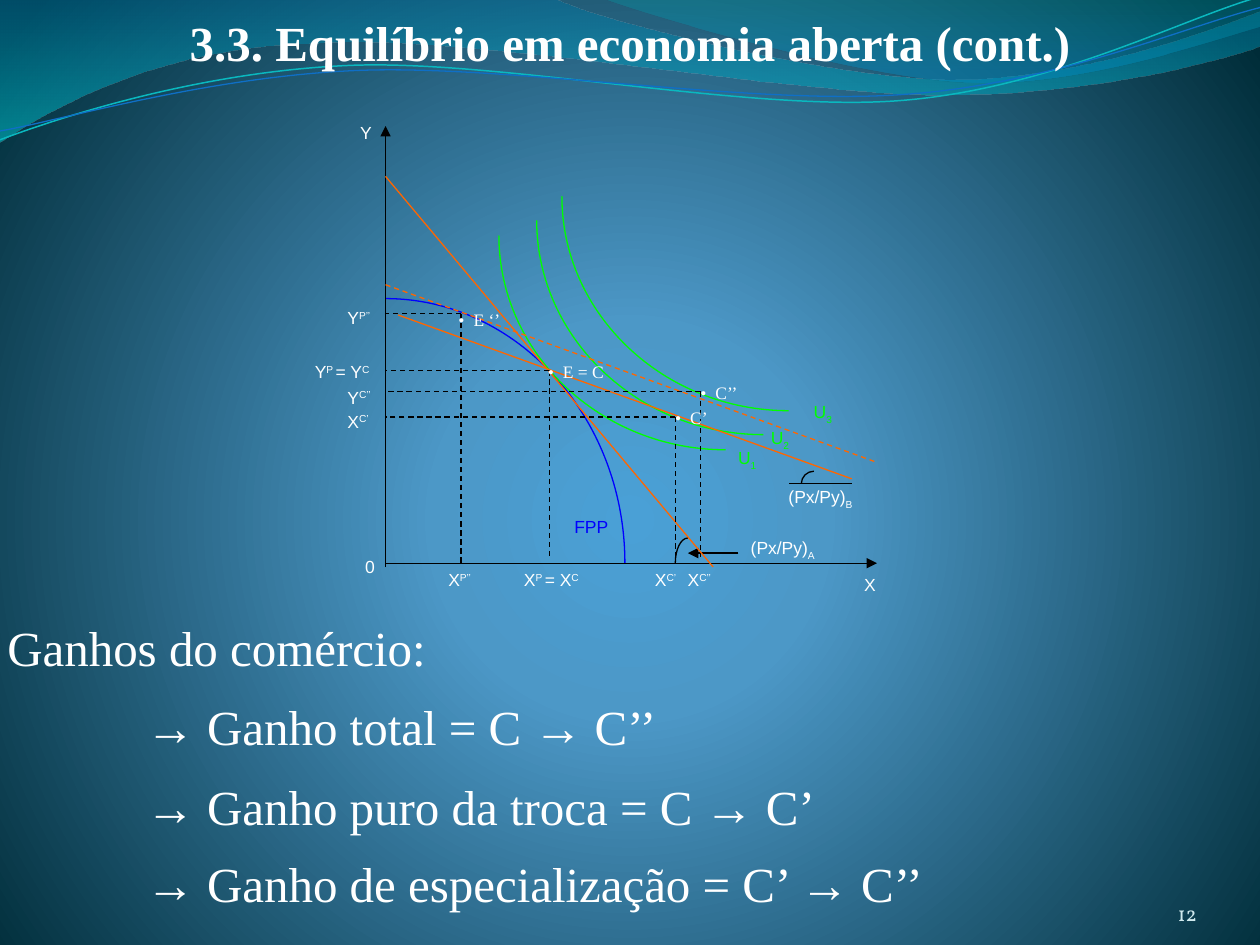
from lxml import etree
from pptx import Presentation
from pptx import util as u
from pptx.dml.color import RGBColor
from pptx.enum import dml, text
from pptx.oxml import parse_xml
from pptx.oxml.ns import nsdecls, qn

PX = 9144  # 100 px to the inch
C = {"white": "FFFFFF", "black": "000000", "green": "00FF00", "blue": "0000FF",
     "orange": "FF6600", "number": "D1EAEE", "teal": "0AB8BF", "azure": "0F6FC6"}
SANS, SERIF = "Arial", "Times New Roman"

prs = Presentation()
prs.slide_width, prs.slide_height = 1000 * PX, 750 * PX
s = prs.slides.add_slide(prs.slide_layouts[6])


def outline(pts, steps, close=False):
    """Add a freeform; steps has L for a line (one point) and C for a cubic curve (three)."""
    pts = [(x * PX, y * PX) for x, y in pts]
    fb = s.shapes.build_freeform(*pts[0])
    fb.add_line_segments(pts[1:], close=close)
    sp = fb.convert_to_shape()
    sp.shadow.inherit = False
    lines = iter(list(sp._element.iter(qn("a:lnTo"))))
    for step in steps:
        first = next(lines)
        if step == "C":
            first.tag = qn("a:cubicBezTo")
            for _ in range(2):
                extra = next(lines)
                first.append(extra[0])
                extra.getparent().remove(extra)
    return sp


def label(x, y, runs, w=100, h=50, size=10, font=SANS, color="white"):
    """Add a text box; each run is (text, baseline in percent)."""
    sp = s.shapes.add_textbox(x * PX, y * PX, w * PX, h * PX)
    tf = sp.text_frame
    tf.word_wrap = True
    for words, base in runs:
        r = tf.paragraphs[0].add_run()
        r.text = words
        r.font.size, r.font.name = u.Pt(size), font
        r.font.color.rgb = RGBColor.from_string(C[color])
        if base:
            r.font._element.set("baseline", str(base * 1000))
    return tf


# Background and waves
top_wave = [(0, 0), (440, -1), (476, 17), (664, 63), (758, 63), (853, 63), (958, 26), (1000, 9),
            (1001, 36), (983, 44), (870, 76), (746, 75), (622, 75), (382, 28), (257, 34),
            (129, 36), (46, 83), (-1, 113)]
right_wave = [(479, -1), (509, 11), (682, 62), (769, 65), (856, 69), (961, 32), (1000, 21),
              (1000, 0)]
down = '<a:lin ang="5400000" scaled="1"/>'
glow = '<a:path path="circle"><a:fillToRect l="10000" t="110000" r="10000" b="100000"/></a:path>'
s.background.fill.gradient()
gradients = [(s._element, [(0, "4AA0D6", 100), (25, "4C98C7", 100), (100, "002C38", 100)], glow)]
for pts, steps, stops in (
        (top_wave, "LCCLCCC", [(0, "0074A1", 45), (100, "00C6CF", 55)]),
        (right_wave, "CCL", [(0, "00A1A9", 30), (80, "008BBF", 45)])):
    sp = outline(pts, steps, close=True)
    sp.line.fill.background()
    sp.fill.gradient()
    gradients.append((sp._element.spPr, stops, down))
for host, stops, direction in gradients:
    gs = "".join(f'<a:gs pos="{pos * 1000}"><a:srgbClr val="{rgb}"><a:alpha val="{a * 1000}"/>'
                 f'</a:srgbClr></a:gs>' for pos, rgb, a in stops)
    old = next(host.iter(qn("a:gradFill")))
    old.getparent().replace(old, parse_xml(
        f'<a:gradFill {nsdecls("a")} rotWithShape="1"><a:gsLst>{gs}</a:gsLst>{direction}</a:gradFill>'))

# Curves: wave outlines, then quarter ellipses with control points at 0.55 of each radius
curves = [
    ([(0, 111), (48, 93), (158, 57), (277, 52), (395, 47), (593, 89), (713, 80),
      (833, 71), (938, 15), (998, -2)], "teal", 0.85),
    ([(0, 104), (47, 96), (164, 61), (283, 56), (403, 51), (597, 84), (717, 75),
      (836, 67), (941, 21), (1000, 6)], "azure", 0.75)]
for x0, y0, x1, y1, color in (
        (606, 345, 426, 175, "green"), (306, 237, 496, 447, "blue"),
        (576, 357, 396, 187, "green"), (626, 326, 446, 156, "green"),
        (546, 427, 536, 447, "black"), (646, 374, 636, 384, "black")):
    curves.append(([(x0, y0), (x0 + 0.55 * (x1 - x0), y0), (x1, y1 - 0.55 * (y1 - y0)),
                    (x1, y1)], color, 0.75))
for pts, color, width in curves:
    sp = outline(pts, "C" * (len(pts) // 3))
    sp.fill.background()
    sp.line.color.rgb = RGBColor.from_string(C[color])
    sp.line.width = u.Pt(width)

# Straight lines: axes, price lines, dashed guides
for x0, y0, x1, y1, color, style in (
        (306, 450, 306, 100, "black", "arrow"), (306, 447, 696, 447, "black", "arrow"),
        (586, 439, 546, 439, "black", "arrow"), (676, 384, 626, 384, "black", ""),
        (306, 140, 566, 450, "orange", ""), (316, 250, 676, 380, "orange", ""),
        (306, 226, 696, 367, "orange", "dash"),
        (366, 249, 306, 249, "black", "dash"), (366, 249, 366, 449, "black", "dash"),
        (436, 294, 306, 294, "black", "dash"), (436, 294, 436, 444, "black", "dash"),
        (556, 311, 306, 311, "black", "dash"), (556, 311, 556, 442, "black", "dash"),
        (536, 331, 306, 331, "black", "dash"), (536, 331, 536, 442, "black", "dash")):
    cx = s.shapes.add_connector(1, x0 * PX, y0 * PX, x1 * PX, y1 * PX)
    cx.line.color.rgb = RGBColor.from_string(C[color])
    cx.line.width = u.Pt(0.75)
    if style == "dash":
        cx.line.dash_style = dml.MSO_LINE.DASH
    if style == "arrow":
        etree.SubElement(cx.line._get_or_add_ln(), qn("a:tailEnd"), type="triangle")
    etree.SubElement(cx._element.spPr, qn("a:effectLst"))

# Axis, curve and price labels
for x, y, runs, color in (
        (276, 92, [("Y", 0)], "white"), (676, 451, [("X", 0)], "white"),
        (280, 436, [("0", 0)], "white"),
        (266, 239, [("Y", 0), ("P’’", 30)], "white"),
        (240, 282, [("Y", 0), ("P ", 30), ("= Y", 0), ("C", 30)], "white"),
        (266, 302, [("Y", 0), ("C’’", 30)], "white"),
        (266, 321, [("X", 0), ("C’", 30)], "white"),
        (346, 447, [("X", 0), ("P’’", 30)], "white"),
        (406, 447, [("X", 0), ("P ", 30), ("= X", 0), ("C", 30)], "white"),
        (510, 447, [("X", 0), ("C’", 30)], "white"),
        (536, 447, [("X", 0), ("C’’", 30)], "white"),
        (616, 381, [("(Px/Py)", 0), ("B", -30)], "white"),
        (586, 421, [("(Px/Py)", 0), ("A", -30)], "white"),
        (576, 350, [("U", 0), ("1", -30)], "green"),
        (602, 334, [("U", 0), ("2", -30)], "green"),
        (636, 313, [("U", 0), ("3", -30)], "green"),
        (446, 405, [("FPP", 0)], "blue")):
    label(x, y, runs, color=color)

# Equilibrium points: a dot, then the name at a tab stop
for x, y, name in ((354, 240, "E ‘’"), (425, 282, "E = C"), (546, 298, "C’’"), (526, 318, "C’")):
    tf = label(x, y, [(f"•\t{name}", 0)], font=SERIF)
    tabs = etree.SubElement(tf.paragraphs[0]._p.get_or_add_pPr(), qn("a:tabLst"))
    etree.SubElement(tabs, qn("a:tab"), pos=str(12 * PX), algn="l")

# Title, gains and slide number
tf = label(0, 5, [("3.3. Equilíbrio em economia aberta (cont.)", 0)], 1000, 57, 28, SERIF)
tf.auto_size = text.MSO_AUTO_SIZE.SHAPE_TO_FIT_TEXT
tf.paragraphs[0].alignment = text.PP_ALIGN.CENTER
tf.paragraphs[0].runs[0].font.bold = True
for y, indent, words in ((485, 0, "Ganhos do comércio:"),
                         (548, 110, "→ Ganho total = C → C’’"),
                         (611, 110, "→ Ganho puro da troca = C → C’"),
                         (672, 110, "→ Ganho de especialização = C’ → C’’")):
    tf = label(-4, y, [(words, 0)], 1000, 57, 28, SERIF)
    tf.auto_size = text.MSO_AUTO_SIZE.SHAPE_TO_FIT_TEXT
    tf.vertical_anchor = text.MSO_ANCHOR.MIDDLE
    tf.paragraphs[0]._p.get_or_add_pPr().set("marL", str(indent * PX))
tf = label(867, 695, [("12", 0)], 83, 40, 12, "Vollkorn", "number")
tf.margin_left = tf.margin_top = tf.margin_right = tf.margin_bottom = 0
tf.vertical_anchor = text.MSO_ANCHOR.BOTTOM
tf.paragraphs[0].alignment = text.PP_ALIGN.RIGHT

prs.save("out.pptx")
